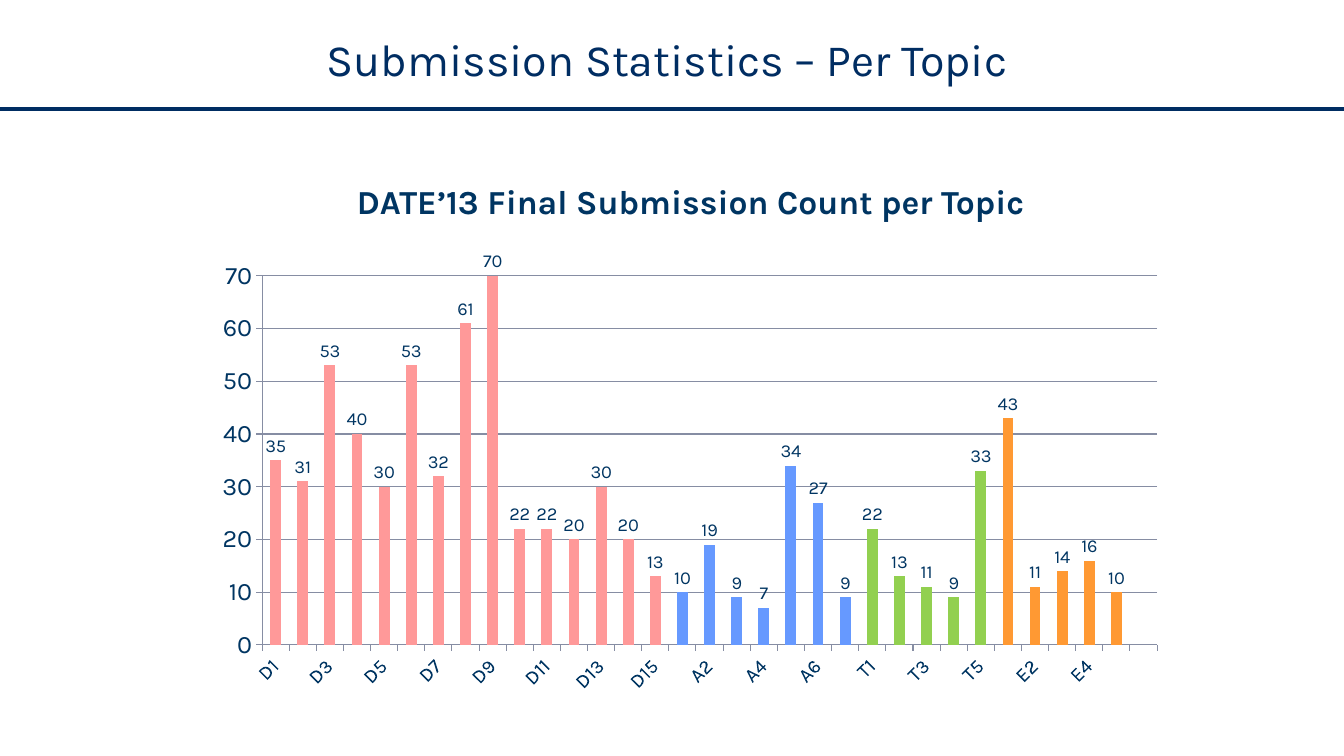
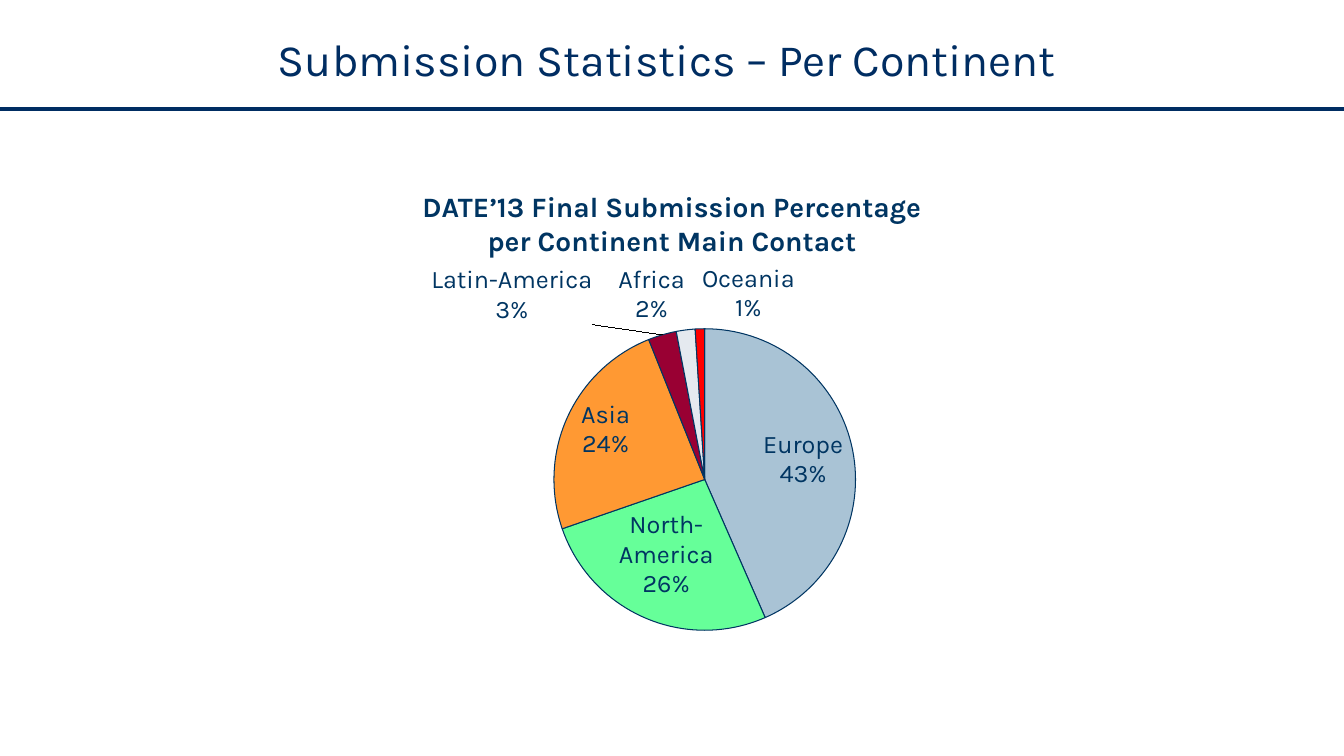
from itertools import chain, repeat

from lxml.etree import SubElement
from pptx import Presentation
from pptx.chart.data import CategoryChartData
from pptx.dml.color import RGBColor
from pptx.enum.chart import XL_CHART_TYPE, XL_LABEL_POSITION, XL_TICK_MARK
from pptx.enum.shapes import MSO_CONNECTOR
from pptx.enum.text import MSO_ANCHOR, MSO_AUTO_SIZE, PP_ALIGN
from pptx.oxml.ns import qn
from pptx.util import Inches, Pt

FONT = "Karla"
NAVY = "002D62"
INK = "003562"
GRID = "868DA3"
WIDTH, HEIGHT = 13.33, 7.5
TITLE_BOX = (0.89, 0.08, 11.46, 1)
RULE_TOP = 1.08
CHART_BOX = (2.02, 2.49, 9.65, 4.49)

# prefix, bar colour, submissions for topics 1, 2, 3 ...
TOPICS = [
    ("D", "FF9999", [35, 31, 53, 40, 30, 53, 32, 61, 70, 22, 22, 20, 30, 20, 13]),
    ("A", "6699FF", [10, 19, 9, 7, 34, 27, 9]),
    ("T", "92D050", [22, 13, 11, 9, 33]),
    ("E", "FF9933", [43, 11, 14, 16, 10]),
]
# continent, percentage, slice colour
CONTINENTS = [
    ("Europe", 43, "A9C3D5"),
    ("North-America", 26, "66FF99"),
    ("Asia", 24, "FF9933"),
    ("Latin-America", 3, "990033"),
    ("Africa", 2, "E5E9EF"),
    ("Oceania", 1, "FF0000"),
]
# slice index: label shift as a share of the chart's width and height
OUTER_LABELS = {3: (-0.07, -0.01), 4: (0, 0), 5: (0.05, 0)}


def rgb(value):
    return RGBColor.from_string(value)


def inches(box):
    return [Inches(value) for value in box]


def set_font(font, size, color=INK, bold=False):
    for name, value in {"name": FONT, "size": Pt(size), "bold": bold}.items():
        setattr(font, name, value)
    font.color.rgb = rgb(color)


def set_line(line, color, width):
    line.color.rgb = rgb(color)
    line.width = Pt(width)


def set_fill(fill, color):
    fill.solid()
    fill.fore_color.rgb = rgb(color)


def add_page(deck, title):
    """Add a slide with its title and the rule below it."""
    page = deck.slides.add_slide(deck.slide_layouts[5])
    rule = page.shapes.add_connector(
        MSO_CONNECTOR.STRAIGHT, *inches((0, RULE_TOP, WIDTH, RULE_TOP)))
    set_line(rule.line, NAVY, 3)
    SubElement(rule._element.spPr, qn("a:effectLst"))

    heading = page.shapes.title
    for name, value in zip(("left", "top", "width", "height"), inches(TITLE_BOX)):
        setattr(heading, name, value)
    heading.text_frame.vertical_anchor = MSO_ANCHOR.MIDDLE
    heading.text_frame.text = title
    para = heading.text_frame.paragraphs[0]
    para.alignment = PP_ALIGN.CENTER
    set_font(para.runs[0].font, 32, NAVY)
    return page


def add_caption(page, box, lines, size):
    frame = page.shapes.add_textbox(*inches(box)).text_frame
    frame.word_wrap = True
    frame.auto_size = MSO_AUTO_SIZE.SHAPE_TO_FIT_TEXT
    frame.text = "\n".join(lines)
    for para in frame.paragraphs:
        para.alignment = PP_ALIGN.CENTER
        set_font(para.runs[0].font, size, bold=True)


def add_layout(parent, position, values):
    """Insert a manual layout into a chart element at a child position."""
    for old in parent.findall(qn("c:layout")):
        parent.remove(old)
    layout = parent.makeelement(qn("c:layout"))
    manual = SubElement(layout, qn("c:manualLayout"))
    for name, value in values.items():
        SubElement(manual, qn(f"c:{name}")).set("val", str(value))
    parent.insert(position, layout)


def add_chart(page, kind, names, values, plot_box):
    """Add a chart whose inner plot area is given in shares of CHART_BOX."""
    data = CategoryChartData()
    data.categories = names
    data.add_series("Series 1", values)
    chart = page.shapes.add_chart(kind, *inches(CHART_BOX), data).chart
    chart.has_legend = chart.has_title = False
    set_font(chart.font, 18)
    left, top, width, height = plot_box
    add_layout(chart._chartSpace.chart.plotArea, 0, {
        "layoutTarget": "inner", "xMode": "edge", "yMode": "edge",
        "x": left, "y": top, "w": width, "h": height})
    return chart


def format_axes(chart):
    for axis, size in ((chart.category_axis, 14), (chart.value_axis, 18)):
        axis.major_tick_mark = XL_TICK_MARK.OUTSIDE
        axis.minor_tick_mark = XL_TICK_MARK.NONE
        set_font(axis.tick_labels.font, size)
        set_line(axis.format.line, GRID, 0.75)
    scale = {"minimum_scale": 0, "maximum_scale": 70, "major_unit": 10}
    for name, value in scale.items():
        setattr(chart.value_axis, name, value)
    set_line(chart.value_axis.major_gridlines.format.line, GRID, 0.75)

    topics = chart.category_axis._element
    topics.find(qn("c:txPr")).find(qn("a:bodyPr")).set("rot", "-2700000")
    skip = topics.makeelement(qn("c:tickLblSkip"), {"val": "2"})
    topics.find(qn("c:noMultiLvlLbl")).addprevious(skip)


def add_topic_chart(page):
    names = [f"{prefix}{number}" for prefix, _, counts in TOPICS
             for number in range(1, len(counts) + 1)]
    counts = chain.from_iterable(counts for _, _, counts in TOPICS)
    colors = chain.from_iterable(
        repeat(color, len(counts)) for _, color, counts in TOPICS)
    chart = add_chart(page, XL_CHART_TYPE.COLUMN_CLUSTERED,
                      names + [""], [*counts, None], (0.06, 0.05, 0.92, 0.82))
    format_axes(chart)
    plot = chart.plots[0]
    plot.gap_width = 150
    plot.vary_by_categories = False
    bars = plot.series[0]
    set_fill(bars.format.fill, TOPICS[0][1])
    for index, color in enumerate(colors):
        if color != TOPICS[0][1]:
            set_fill(bars.points[index].format.fill, color)
    labels = bars.data_labels
    labels.show_value = True
    labels.position = XL_LABEL_POSITION.OUTSIDE_END
    set_font(labels.font, 13)


def show_name_and_percent(element):
    for name, value in {"showVal": 0, "showCatName": 1, "showPercent": 1}.items():
        element.find(qn(f"c:{name}")).set("val", str(value))
    separator = element.makeelement(qn("c:separator"))
    separator.text = "\n"
    element.find(qn("c:showBubbleSize")).addnext(separator)


def add_continent_chart(page):
    names, shares, colors = zip(*CONTINENTS)
    chart = add_chart(page, XL_CHART_TYPE.PIE, names, shares,
                      (0.36, 0.17, 0.31, 0.67))
    chart.plots[0].vary_by_categories = True
    pie = chart.plots[0].series[0]
    for index, color in enumerate(colors):
        slice_format = pie.points[index].format
        set_fill(slice_format.fill, color)
        set_line(slice_format.line, INK, 0.75)

    labels = pie.data_labels
    labels.position = XL_LABEL_POSITION.BEST_FIT
    set_font(labels.font, 18)
    show_name_and_percent(labels._element)
    for index in OUTER_LABELS:
        label = pie.points[index].data_label
        set_font(label.font, 18)
        label.position = XL_LABEL_POSITION.OUTSIDE_END
    outer = labels._element.findall(qn("c:dLbl"))
    for element, (right, down) in zip(outer, OUTER_LABELS.values()):
        show_name_and_percent(element)
        if right or down:
            add_layout(element, 1, {"x": right, "y": down})


def main():
    deck = Presentation()
    deck.slide_width, deck.slide_height = inches((WIDTH, HEIGHT))

    page = add_page(deck, "Submission Statistics – Per Topic")
    add_topic_chart(page)
    add_caption(page, (3.11, 1.75, 7.48, 0.5),
                ["DATE’13 Final Submission Count per Topic"], 24)

    page = add_page(deck, "Submission Statistics – Per Continent")
    add_continent_chart(page)
    add_caption(page, (1.94, 1.83, 9.45, 0.77),
                ["DATE’13 Final Submission Percentage",
                 "per Continent Main Contact"], 20)

    deck.save("out.pptx")


if __name__ == "__main__":
    main()
